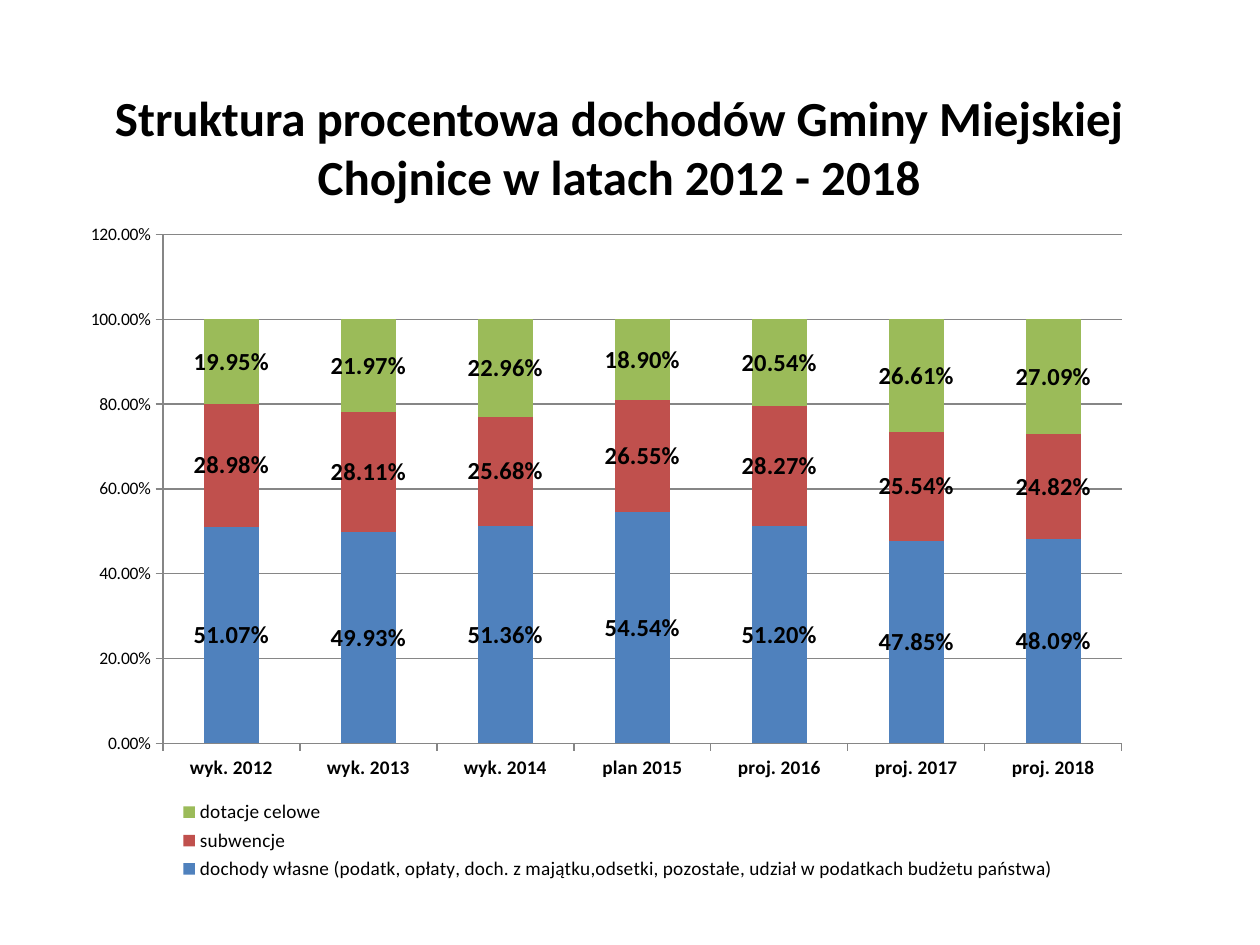
from pptx import Presentation
from pptx.chart.data import CategoryChartData
from pptx.dml.color import RGBColor
from pptx.enum.chart import XL_CHART_TYPE as ChartType, XL_LABEL_POSITION as LabelPosition
from pptx.enum.chart import XL_LEGEND_POSITION as LegendPosition, XL_TICK_MARK as TickMark
from pptx.enum.text import MSO_ANCHOR as Anchor, PP_ALIGN as Align
from pptx.oxml import parse_xml
from pptx.oxml.ns import nsdecls, qn
from pptx.util import Pt

EMU_PER_PX = 914400 / 126
SLIDE_SIZE = (1260, 945)
TITLE_BOX = (54, 45, 1130, 203)
CHART_BOX = (45, 204, 1168, 697)
PLOT_BOX = (163, 235, 959, 509)
LEGEND_BOX = (175, 796, 888, 90)

TITLE = "Struktura procentowa dochodów Gminy Miejskiej Chojnice w latach 2012 - 2018"
YEARS = ["wyk. 2012", "wyk. 2013", "wyk. 2014", "plan 2015", "proj. 2016", "proj. 2017", "proj. 2018"]
INCOME = [
    ("dochody własne (podatk, opłaty, doch. z majątku,odsetki, pozostałe, udział w podatkach budżetu państwa)",
     "4F81BD", [0.5107, 0.4993, 0.5136, 0.5454, 0.5120, 0.4785, 0.4809]),
    ("subwencje", "C0504D", [0.2898, 0.2811, 0.2568, 0.2655, 0.2827, 0.2554, 0.2482]),
    ("dotacje celowe", "9BBB59", [0.1995, 0.2197, 0.2296, 0.1890, 0.2054, 0.2661, 0.2709]),
]
PERCENT = "0.00%"
BLACK, GRAY = "000000", "868686"


def emu(pixels):
    return round(pixels * EMU_PER_PX)


def color(value):
    return RGBColor.from_string(value)


def set_values(target, values):
    for name, value in values.items():
        setattr(target, name, value)


def set_font(font, size, bold=False):
    set_values(font, {"name": "Calibri", "size": Pt(size), "bold": bold})
    font.color.rgb = color(BLACK)


def set_line(line):
    line.color.rgb = color(GRAY)
    line.width = Pt(0.75)


def place_part(element, index, box, inner=False):
    """Fix a chart part at a pixel box by its manual layout."""
    left, top, width, height = CHART_BOX
    fractions = {
        "x": (box[0] - left) / width, "y": (box[1] - top) / height,
        "w": box[2] / width, "h": box[3] / height,
    }
    target = '<c:layoutTarget val="inner"/>' if inner else ""
    modes = "".join(f'<c:{name}Mode val="edge"/>' for name in "xy")
    sizes = "".join(f'<c:{name} val="{value:.3f}"/>' for name, value in fractions.items())
    for layout in element.findall(qn("c:layout")):
        element.remove(layout)
    element.insert(index, parse_xml(
        f'<c:layout {nsdecls("c")}><c:manualLayout>{target}{modes}{sizes}</c:manualLayout></c:layout>'))


def add_title(slide):
    frame = slide.shapes.add_textbox(*map(emu, TITLE_BOX)).text_frame
    set_values(frame, {"word_wrap": True, "vertical_anchor": Anchor.MIDDLE})
    paragraph = frame.paragraphs[0]
    set_values(paragraph, {"text": TITLE, "alignment": Align.CENTER})
    set_font(paragraph.runs[0].font, 28, True)


def add_income_chart(slide):
    data = CategoryChartData(number_format=PERCENT)
    data.categories = YEARS
    for name, _, values in INCOME:
        data.add_series(name, values)
    chart = slide.shapes.add_chart(ChartType.COLUMN_STACKED, *map(emu, CHART_BOX), data).chart
    set_values(chart, {"has_title": False, "has_legend": True})
    set_font(chart.font, 10)

    plot = chart.plots[0]
    set_values(plot, {"gap_width": 150, "overlap": 100, "vary_by_categories": False})
    for series, (_, fill, _) in zip(plot.series, INCOME):
        series.format.fill.solid()
        series.format.fill.fore_color.rgb = color(fill)
        set_values(series.data_labels, {
            "show_value": True, "number_format": PERCENT,
            "number_format_is_linked": False, "position": LabelPosition.CENTER,
        })
        set_font(series.data_labels.font, 14, True)

    for axis, size, bold in ((chart.category_axis, 11, True), (chart.value_axis, 10, False)):
        set_values(axis, {"major_tick_mark": TickMark.OUTSIDE, "minor_tick_mark": TickMark.NONE})
        set_font(axis.tick_labels.font, size, bold)
        set_line(axis.format.line)
    set_values(chart.value_axis, {
        "minimum_scale": 0, "maximum_scale": 1.2, "major_unit": 0.2, "has_major_gridlines": True,
    })
    set_values(chart.value_axis.tick_labels, {"number_format": PERCENT, "number_format_is_linked": False})
    set_line(chart.value_axis.major_gridlines.format.line)

    legend = chart.legend
    set_values(legend, {"position": LegendPosition.RIGHT, "include_in_layout": False})
    set_font(legend.font, 11)
    legend_element = chart.element.find(".//" + qn("c:legend"))
    place_part(legend_element, 1, LEGEND_BOX)
    place_part(chart.element.find(".//" + qn("c:plotArea")), 0, PLOT_BOX, inner=True)


def main():
    presentation = Presentation()
    set_values(presentation, dict(zip(("slide_width", "slide_height"), map(emu, SLIDE_SIZE))))
    slide = presentation.slides.add_slide(presentation.slide_layouts[6])
    add_title(slide)
    add_income_chart(slide)
    presentation.save("out.pptx")


if __name__ == "__main__":
    main()
